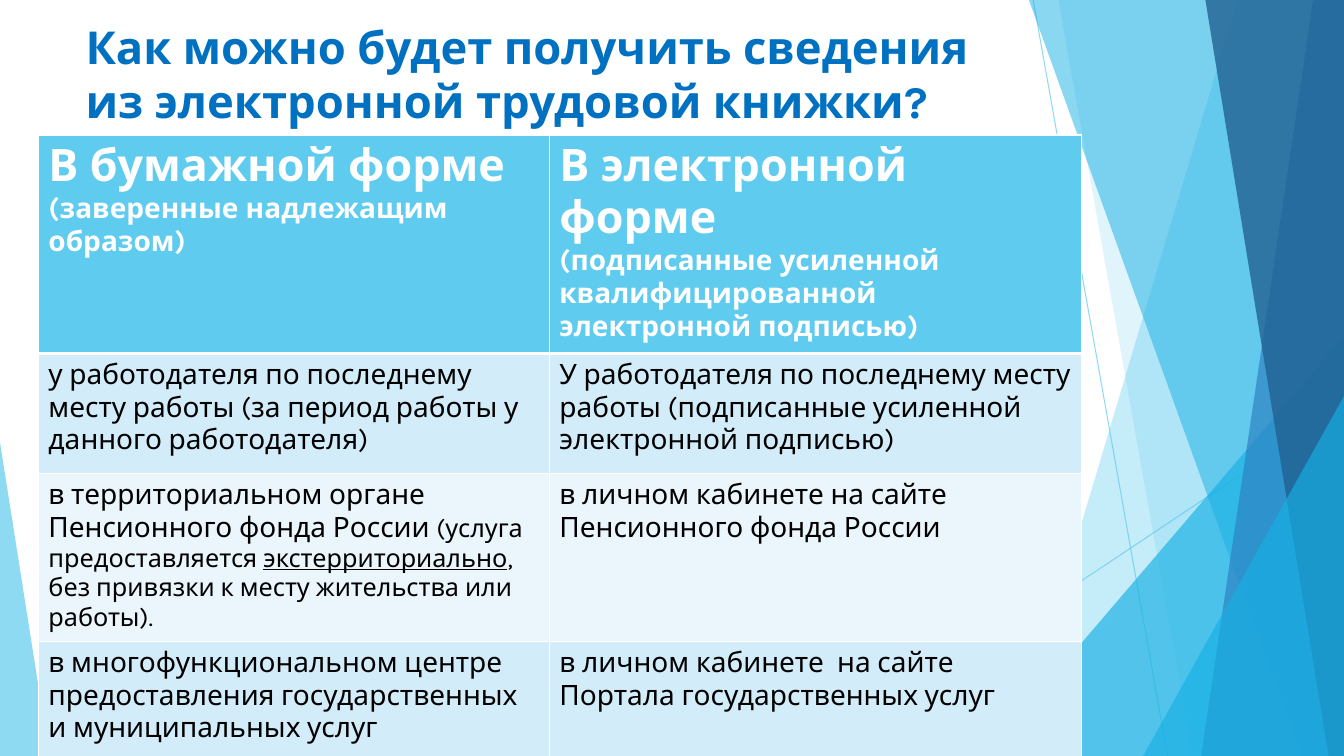
from lxml import etree
from pptx import Presentation
from pptx.dml.color import RGBColor
from pptx.enum import shapes, text
from pptx.oxml.ns import qn
from pptx.util import Pt

WIDTH, HEIGHT = 960, 540
WHITE = RGBColor(0xFF, 0xFF, 0xFF)
BLACK = RGBColor(0, 0, 0)
TITLE_BLUE = RGBColor(0x00, 0x70, 0xC0)
SKY = RGBColor(0x5F, 0xCB, 0xEF)
CYAN = RGBColor(0x17, 0xB0, 0xE4)
BLUE = RGBColor(0x2E, 0x83, 0xC3)
NAVY = RGBColor(0x22, 0x62, 0x92)
BAND_DARK = RGBColor(0xD2, 0xEC, 0xF9)
BAND_LIGHT = RGBColor(0xEA, 0xF6, 0xFC)

HEADING = {"size": Pt(32), "bold": True}
SUBHEADING = {"size": Pt(20), "bold": True}
BODY = {"size": Pt(20), "bold": False}
NOTE = {"size": Pt(18), "bold": False}
UNDERLINED = {**NOTE, "underline": True}

# Each cell is a list of paragraphs, each paragraph a list of (words, format).
ROWS = [
    (127.5, SKY, WHITE, [
        [[("В бумажной форме ", HEADING), ("(заверенные надлежащим образом)", SUBHEADING)]],
        [[("В электронной форме", HEADING)],
         [("(подписанные усиленной квалифицированной электронной подписью)", SUBHEADING)]],
    ]),
    (85.7, BAND_DARK, BLACK, [
        [[("у работодателя по последнему месту работы (за период работы у данного работодателя)", BODY)]],
        [[("У работодателя по последнему месту работы (подписанные усиленной электронной подписью)", BODY)]],
    ]),
    (103.7, BAND_LIGHT, BLACK, [
        [[("в территориальном органе Пенсионного фонда России ", BODY),
          ("(услуга предоставляется ", NOTE), ("экстерриториально", UNDERLINED),
          (", без привязки к месту жительства или работы).", NOTE)]],
        [[("в личном кабинете на сайте Пенсионного фонда России", BODY)]],
    ]),
    (103, BAND_DARK, BLACK, [
        [[("в многофункциональном центре предоставления государственных и муниципальных услуг", BODY)]],
        [[("в личном кабинете  на сайте Портала государственных услуг", BODY)]],
    ]),
]


class SlideBuilder:
    font = "Karla"

    def __init__(self, slide):
        self.slide = slide
        self.shapes = slide.shapes

    def set_opacity(self, element, percent):
        color = next(element.iter(qn("a:srgbClr")))
        etree.SubElement(color, qn("a:alpha"), val=str(percent * 1000))

    def paint(self, shape, color, opacity):
        shape.shadow.inherit = False
        shape.fill.solid()
        shape.fill.fore_color.rgb = color
        shape.line.fill.background()
        self.set_opacity(shape._element.spPr, opacity)

    def ray(self, start, end):
        ray = self.shapes.add_connector(
            shapes.MSO_CONNECTOR.STRAIGHT, *(Pt(n) for n in start + end))
        ray.line.color.rgb = SKY
        ray.line.width = Pt(0.75)
        properties = ray._element.spPr
        self.set_opacity(properties, 70)
        etree.SubElement(properties, qn("a:effectLst"))

    def ribbon(self, top, bottom, color, opacity):
        """Fill from a slanted left edge to the right side of the slide."""
        outline = self.shapes.build_freeform(Pt(top), 0)
        corners = [(WIDTH, 0), (WIDTH, HEIGHT), (bottom, HEIGHT)]
        outline.add_line_segments([(Pt(x), Pt(y)) for x, y in corners], close=True)
        self.paint(outline.convert_to_shape(), color, opacity)

    def corner(self, left, top, width, apex, color, opacity):
        """Triangle standing on the bottom edge of the slide."""
        corner = self.shapes.add_shape(
            shapes.MSO_SHAPE.ISOSCELES_TRIANGLE,
            Pt(left), Pt(top), Pt(width), Pt(HEIGHT - top))
        corner.adjustments[0] = apex
        self.paint(corner, color, opacity)

    def add_text(self, frame, paragraphs, color):
        for index, pieces in enumerate(paragraphs):
            paragraph = frame.add_paragraph() if index else frame.paragraphs[0]
            paragraph.alignment = text.PP_ALIGN.LEFT
            for words, style in pieces:
                run = paragraph.add_run()
                run.text = words
                for name, value in {"name": self.font, **style}.items():
                    setattr(run.font, name, value)
                run.font.color.rgb = color

    def title(self, words, left, top, width, height):
        frame = self.shapes.add_textbox(Pt(left), Pt(top), Pt(width), Pt(height)).text_frame
        frame.word_wrap = True
        frame.vertical_anchor = text.MSO_ANCHOR.MIDDLE
        self.add_text(frame, [[(words, {"size": Pt(32.4), "bold": True})]], TITLE_BLUE)

    def border(self, cell, **widths):
        properties = cell._tc.get_or_add_tcPr()
        for index, side in enumerate("LRTB"):
            line = etree.Element(qn(f"a:ln{side}"), w=str(Pt(widths.get(side, 1))))
            fill = etree.SubElement(line, qn("a:solidFill"))
            etree.SubElement(fill, qn("a:srgbClr"), val=str(WHITE))
            properties.insert(index, line)

    def table(self, left, top, columns, rows):
        height = sum(row[0] for row in rows)
        table = self.shapes.add_table(
            len(rows), len(columns), Pt(left), Pt(top), Pt(sum(columns)), Pt(height)).table
        for column, width in zip(table.columns, columns):
            column.width = Pt(width)
        for index, (height, fill, color, contents) in enumerate(rows):
            table.rows[index].height = Pt(height)
            heavy = {0: {"B": 3}, 1: {"T": 3}}.get(index, {})
            for cell, paragraphs in zip(table.rows[index].cells, contents):
                cell.fill.solid()
                cell.fill.fore_color.rgb = fill
                self.border(cell, **heavy)
                self.add_text(cell.text_frame, paragraphs, color)


def main():
    deck = Presentation()
    deck.slide_width, deck.slide_height = Pt(WIDTH), Pt(HEIGHT)
    builder = SlideBuilder(deck.slides.add_slide(deck.slide_layouts[6]))

    builder.ray((738, 0), (834, HEIGHT))
    builder.ray((WIDTH, 290), (584.6, HEIGHT))
    builder.ribbon(884, 723, SKY, 36)
    builder.ribbon(756, 852, SKY, 20)
    builder.corner(703.5, 240, 256.5, 1, CYAN, 66)
    builder.ribbon(735, 929.5, CYAN, 50)
    builder.ribbon(938, 858, BLUE, 70)
    builder.ribbon(861, 949, NAVY, 80)
    builder.corner(816.5, 283, 143.5, 1, CYAN, 66)
    builder.corner(0, 316, 35.3, 0, SKY, 70)

    builder.title("Как можно будет получить сведения из электронной трудовой книжки?",
                  54, 8, 677, 88.5)
    builder.table(27.4, 96.5, [365, 380.2], ROWS)
    deck.save("out.pptx")


if __name__ == "__main__":
    main()
